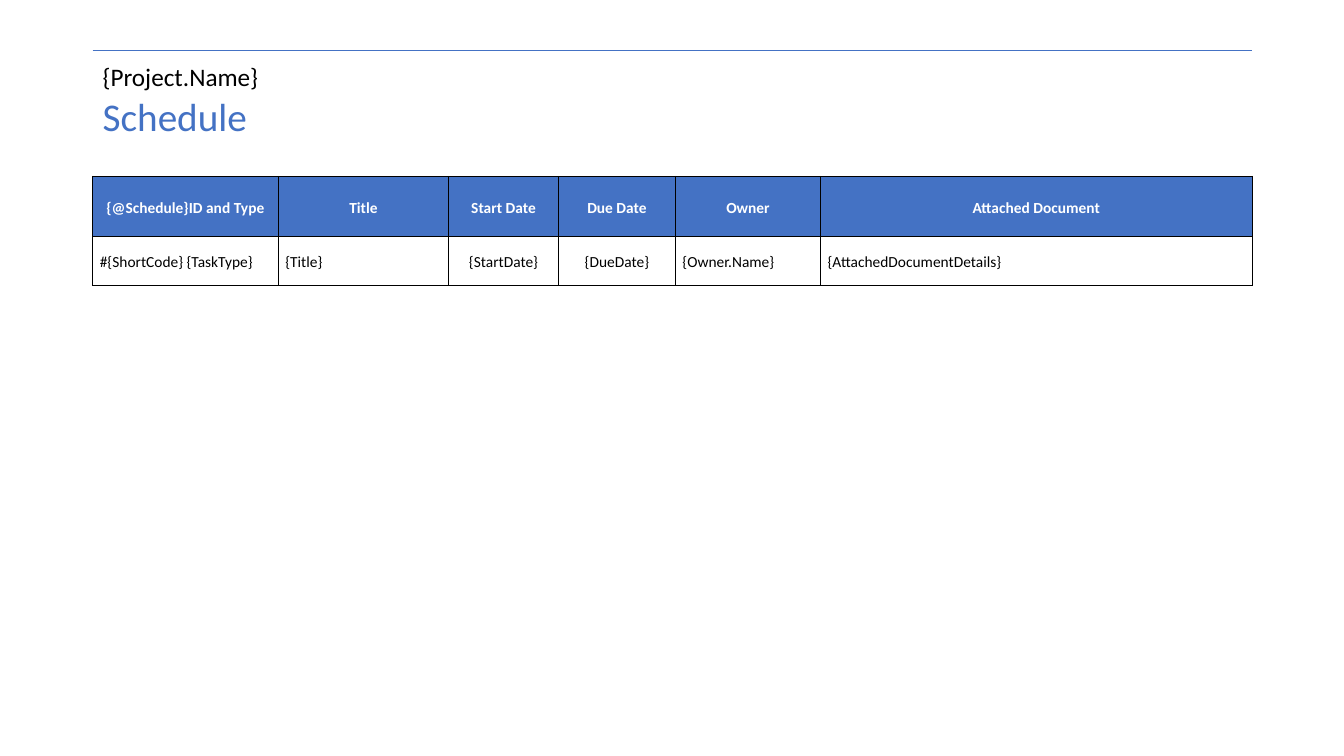
import pptx
import pptx.dml.color
import pptx.enum.shapes
import pptx.enum.text
import pptx.oxml
import pptx.oxml.ns
import pptx.util

PX = 9144  # EMU, 100 px to the inch
BLUE = pptx.dml.color.RGBColor(0x44, 0x72, 0xC4)
BLACK = pptx.dml.color.RGBColor(0, 0, 0)
WHITE = pptx.dml.color.RGBColor(255, 255, 255)
CENTER = pptx.enum.text.PP_ALIGN.CENTER
LEFT = pptx.enum.text.PP_ALIGN.LEFT
MARGIN, CONTENT_WIDTH = 92, 1150


def style_paragraph(para, size, color, spacing, bold=False):
    para.line_spacing = spacing
    para.font.name = "Calibri"
    para.font.size = pptx.util.Pt(size)
    para.font.color.rgb = color
    para.font.bold = bold


def add_cell_borders(cell):
    properties = cell._tc.get_or_add_tcPr()
    for index, side in enumerate(("lnL", "lnR", "lnT", "lnB")):
        border = pptx.oxml.parse_xml(
            f'<a:{side} {pptx.oxml.ns.nsdecls("a")} w="12700">'
            f'<a:solidFill><a:srgbClr val="{BLACK}"/></a:solidFill></a:{side}>'
        )
        properties.insert(index, border)


deck = pptx.Presentation()
deck.slide_width, deck.slide_height = 1333 * PX, 750 * PX
page = deck.slides.add_slide(deck.slide_layouts[6])

rule = page.shapes.add_connector(
    pptx.enum.shapes.MSO_CONNECTOR.STRAIGHT,
    MARGIN * PX, 50 * PX, (MARGIN + CONTENT_WIDTH) * PX, 50 * PX,
)
rule.line.color.rgb = BLUE
rule.line.width = pptx.util.Pt(1)
rule._element.spPr.append(
    pptx.oxml.parse_xml(f'<a:effectLst {pptx.oxml.ns.nsdecls("a")}/>')
)

# text, top, width, height, vertical inset, size, colour
headings = [
    ("Schedule", 97, CONTENT_WIDTH, 42, 0, 28, BLUE),
    ("{Project.Name}", 59, 1071, 30, 5, 18, BLACK),
]
for text, top, width, height, inset, size, color in headings:
    box = page.shapes.add_textbox(MARGIN * PX, top * PX, width * PX, height * PX)
    frame = box.text_frame
    frame.word_wrap = True
    frame.margin_left = frame.margin_right = 10 * PX
    frame.margin_top = frame.margin_bottom = inset * PX
    frame.text = text
    style_paragraph(frame.paragraphs[0], size, color, 0.9)

# header, field, column width, field alignment
columns = [
    ("{@Schedule}ID and Type", "#{ShortCode} {TaskType}", 184, LEFT),
    ("Title", "{Title}", 169, LEFT),
    ("Start Date", "{StartDate}", 109, CENTER),
    ("Due Date", "{DueDate}", 116, CENTER),
    ("Owner", "{Owner.Name}", 144, LEFT),
    ("Attached Document", "{AttachedDocumentDetails}", 428, LEFT),
]
row_heights = (60, 48)
schedule = page.shapes.add_table(
    len(row_heights), len(columns),
    MARGIN * PX, 175 * PX, CONTENT_WIDTH * PX, sum(row_heights) * PX,
).table
schedule.horz_banding = False
for row, height in zip(schedule.rows, row_heights):
    row.height = height * PX

for column_index, (header, field, width, alignment) in enumerate(columns):
    schedule.columns[column_index].width = width * PX
    for row_index, text in enumerate((header, field)):
        is_header = row_index == 0
        cell = schedule.cell(row_index, column_index)
        cell.text = text
        cell.vertical_anchor = pptx.enum.text.MSO_ANCHOR.MIDDLE
        cell.margin_left = cell.margin_right = 7 * PX
        cell.margin_top = cell.margin_bottom = 0
        if is_header:
            cell.fill.solid()
            cell.fill.fore_color.rgb = BLUE
        else:
            cell.fill.background()
        add_cell_borders(cell)
        para = cell.text_frame.paragraphs[0]
        para.alignment = CENTER if is_header else alignment
        para.space_before = para.space_after = pptx.util.Pt(6)
        style_paragraph(para, 11, WHITE if is_header else BLACK, 1.15, is_header)

deck.save("out.pptx")
